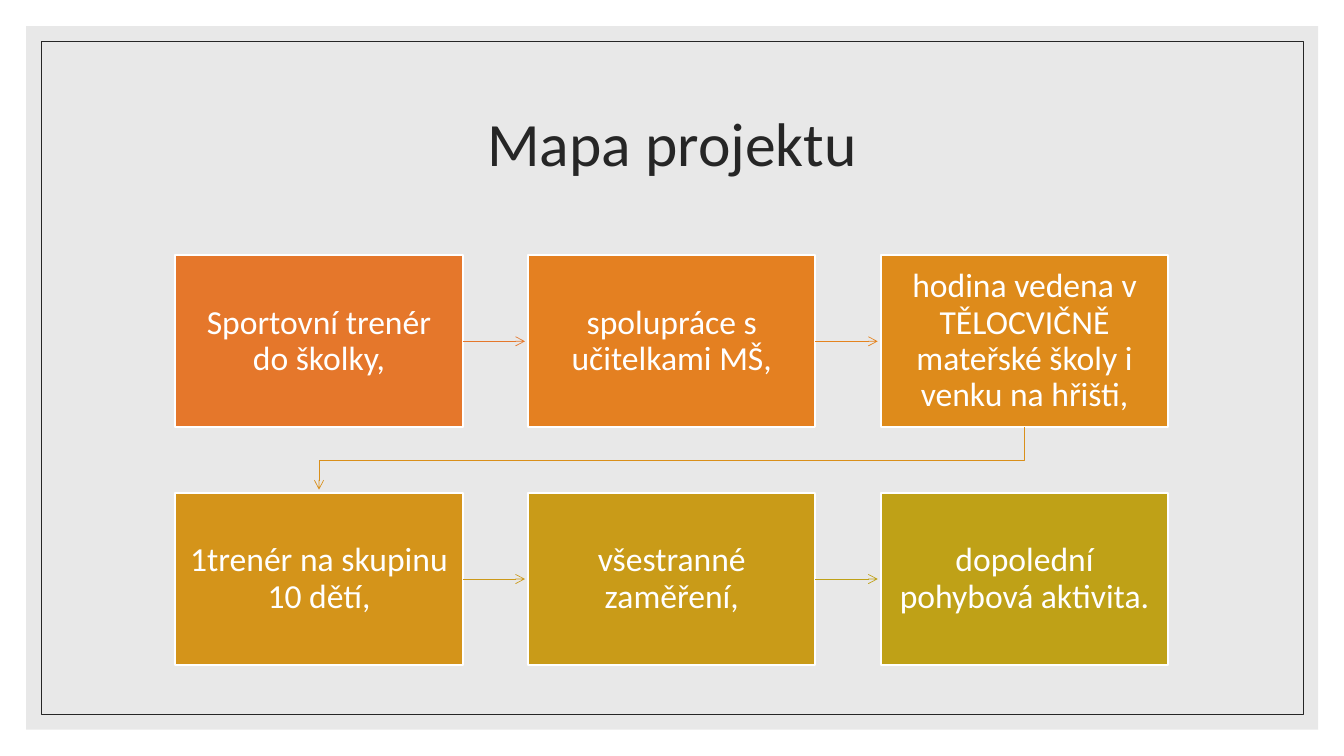
from lxml import etree
from pptx import Presentation
from pptx.dml.color import RGBColor
from pptx.enum import shapes, text
from pptx.oxml import ns
from pptx.util import Cm, Pt

# Content: step text, box colour, colour of the arrow leaving the box
TITLE = "Mapa projektu"
STEPS = [
    ("Sportovní trenér do školky,", RGBColor(0xE5, 0x77, 0x2B), RGBColor(0xE5, 0x77, 0x2B)),
    ("spolupráce s učitelkami MŠ,", RGBColor(0xE4, 0x80, 0x21), RGBColor(0xE4, 0x83, 0x1E)),
    ("hodina vedena v TĚLOCVIČNĚ mateřské školy i venku na hřišti,",
     RGBColor(0xDE, 0x8B, 0x1B), RGBColor(0xD9, 0x8F, 0x1A)),
    ("1trenér na skupinu 10 dětí,", RGBColor(0xD4, 0x94, 0x1A), RGBColor(0xCC, 0x99, 0x19)),
    ("všestranné zaměření,", RGBColor(0xC9, 0x9B, 0x18), RGBColor(0xBF, 0xA1, 0x17)),
    ("dopolední pohybová aktivita.", RGBColor(0xBF, 0xA1, 0x17), None),
]
WHITE = RGBColor(0xFF, 0xFF, 0xFF)
PANEL = RGBColor(0xD9, 0xD9, 0xD9)
DARK = RGBColor(0x26, 0x26, 0x26)
FONT = "Calibri"

# Grid of steps
COLS = 3
LEFT, TOP = Cm(4.42), Cm(6.43)
BOX_W, BOX_H = Cm(7.24), Cm(4.34)
STEP_X, STEP_Y = Cm(8.89), Cm(5.99)
ARROW_GAP = Cm(0.08)

prs = Presentation()
prs.slide_width, prs.slide_height = Cm(33.87), Cm(19.05)
s = prs.slides.add_slide(prs.slide_layouts[6])
s.background.fill.solid()
s.background.fill.fore_color.rgb = WHITE


def add_rect(x, y, w, h, fill=None, line=None, width=0.5):
    sp = s.shapes.add_shape(shapes.MSO_SHAPE.RECTANGLE, x, y, w, h)
    sp.shadow.inherit = False
    if fill is None:
        sp.fill.background()
    else:
        sp.fill.solid()
        sp.fill.fore_color.rgb = fill
    if line is None:
        sp.line.fill.background()
    else:
        sp.line.color.rgb = line
        sp.line.width = Pt(width)
    return sp


def write(sp, words, size, color):
    tf = sp.text_frame
    tf.word_wrap = True
    tf.vertical_anchor = text.MSO_ANCHOR.MIDDLE
    p = tf.paragraphs[0]
    p.text = words
    p.alignment = text.PP_ALIGN.CENTER
    p.line_spacing = 0.9
    p.font.name, p.font.size, p.font.color.rgb = FONT, Pt(size), color
    return tf


def style_arrow(sp, color):
    sp.line.color.rgb = color
    sp.line.width = Pt(0.5)
    etree.SubElement(sp.line._get_or_add_ln(), ns.qn("a:tailEnd"), type="arrow")
    if sp._element.spPr.find(ns.qn("a:effectLst")) is None:
        etree.SubElement(sp._element.spPr, ns.qn("a:effectLst"))


# Panel, frame and title
panel = add_rect(Cm(0.66), Cm(0.66), Cm(32.56), Cm(17.73), fill=PANEL)
panel_color = panel._element.spPr.find(".//" + ns.qn("a:srgbClr"))
etree.SubElement(panel_color, ns.qn("a:alpha"), val="60000")
add_rect(Cm(1.04), Cm(1.04), Cm(31.8), Cm(16.97), line=DARK)
title = s.shapes.add_textbox(Cm(2.97), Cm(1.78), Cm(27.94), Cm(3.81))
write(title, TITLE, 44, DARK)

# Step boxes
boxes = []
for i, (words, fill, _) in enumerate(STEPS):
    row, col = divmod(i, COLS)
    box = add_rect(LEFT + col * STEP_X, TOP + row * STEP_Y, BOX_W, BOX_H, fill, WHITE, 1.5)
    tf = write(box, words, 24, WHITE)
    tf.margin_left = tf.margin_right = Cm(0.36)
    tf.margin_top = tf.margin_bottom = Cm(0.38)
    boxes.append(box)

# Arrows: straight within a row, bent from the end of one row to the next
for start, end, (_, _, color) in zip(boxes, boxes[1:], STEPS):
    if start.top == end.top:
        y = start.top + BOX_H // 2
        arrow = s.shapes.add_connector(shapes.MSO_CONNECTOR.STRAIGHT, start.left + BOX_W, y,
                                       end.left - ARROW_GAP, y)
        arrow.begin_connect(start, 3)
    else:
        x1, x2 = start.left + BOX_W // 2, end.left + BOX_W // 2
        y1 = start.top + BOX_H
        y_mid = (y1 + end.top) // 2
        fb = s.shapes.build_freeform(x1, y1)
        fb.add_line_segments([(x1, y_mid), (x2, y_mid), (x2, end.top - ARROW_GAP)], close=False)
        arrow = fb.convert_to_shape()
        arrow.fill.background()
    style_arrow(arrow, color)

prs.save("out.pptx")
